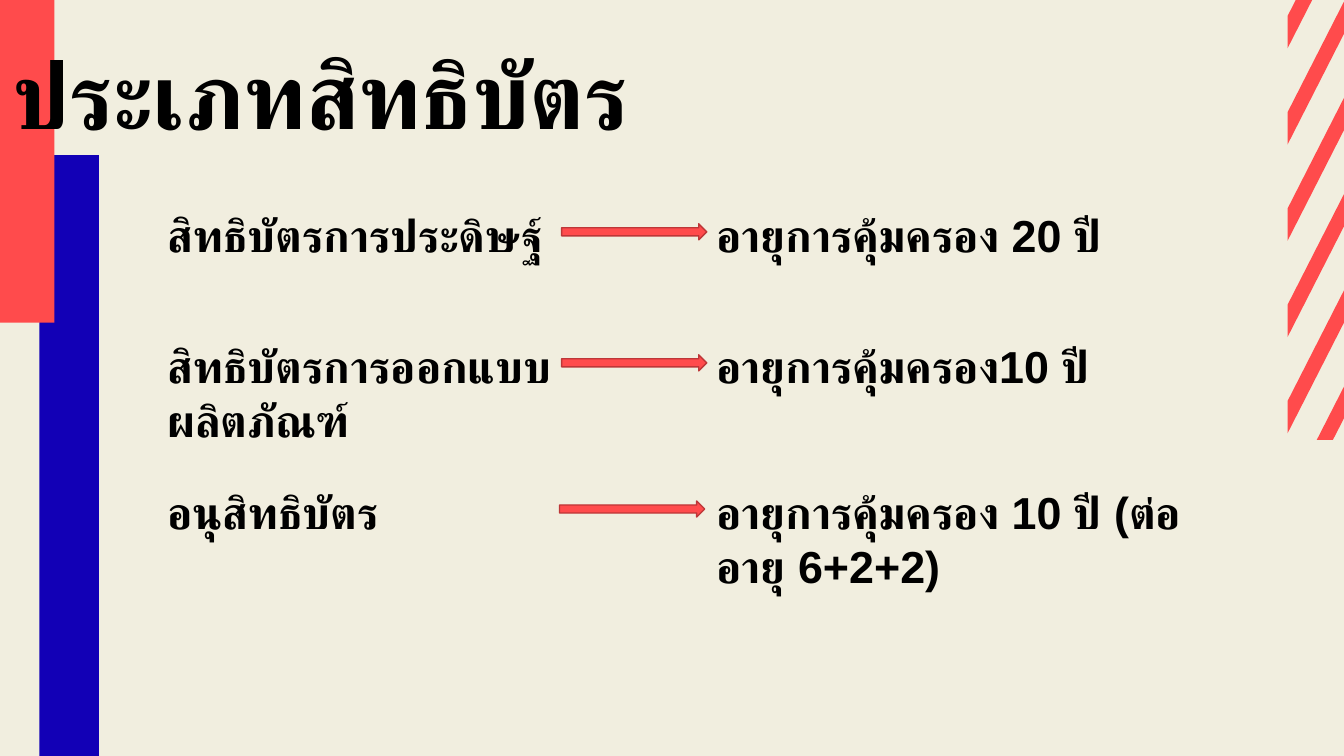
from lxml import etree
from pptx import Presentation
from pptx import util as u
from pptx.dml import color
from pptx.enum import shapes, text
from pptx.oxml import ns

RED, BLUE, CREAM, BLACK, DARK_RED = "FF4B4C", "1200B6", "F1EEDF", "000000", "BD3738"

PATENT_TYPES = [
    (2.01, "สิทธิบัตรการประดิษฐ์", "อายุการคุ้มครอง 20 ปี", 5.57, 4.64),
    (3.31, "สิทธิบัตรการออกแบบผลิตภัณฑ์", "อายุการคุ้มครอง10 ปี", 5.57, 5.22),
    (4.76, "อนุสิทธิบัตร", "อายุการคุ้มครอง 10 ปี (ต่ออายุ 6+2+2)", 5.55, 5.22),
]


def paint(fill, colour):
    """Fill with a solid colour given as a hex string."""
    fill.solid()
    fill.fore_color.rgb = color.RGBColor.from_string(colour)


def add_block(slide, kind, box, colour, outline=None):
    """Place a flat preset shape in a box given in inches."""
    block = slide.shapes.add_shape(kind, *map(u.Inches, box))
    block.shadow.inherit = False
    paint(block.fill, colour)
    if outline:
        paint(block.line.fill, outline)
        block.line.width = u.Pt(1)
    else:
        block.line.fill.background()
    return block


def add_words(slide, box, words, size):
    """Place bold black wrapped text in a box given in inches."""
    words_box = slide.shapes.add_textbox(*map(u.Inches, box))
    frame = words_box.text_frame
    frame.word_wrap = True
    frame.text = words
    run = frame.paragraphs[0].runs[0]
    run.font.size = u.Pt(size)
    run.font.bold = True
    run.font.name = "Arial"
    paint(run.font.fill, BLACK)
    thai_font = etree.SubElement(run.font._element, ns.qn("a:cs"))
    thai_font.set("typeface", "Arial")
    return frame


def add_stripe(slide, points):
    """Draw one red outline through points given in inches."""
    corners = [(u.Inches(x), u.Inches(y)) for x, y in points]
    builder = slide.shapes.build_freeform(*corners[0])
    builder.add_line_segments(corners[1:], close=True)
    stripe = builder.convert_to_shape()
    stripe.shadow.inherit = False
    paint(stripe.fill, RED)
    stripe.line.fill.background()


def add_stripes(slide, left, top):
    """Stack the chevrons and the last cut-off one at the right edge."""
    middle, right = left + 1.06, left + 2.13
    pitch, rise, thickness = 0.955, 2.08, 0.32
    for row in range(5):
        apex = top + row * pitch
        foot = apex + rise
        add_stripe(slide, [
            (left, foot), (left, foot + thickness), (middle, apex + thickness),
            (right, foot + thickness), (right, foot), (middle, apex)])
    apex = top + 5 * pitch
    base = apex + 1.51
    add_stripe(slide, [
        (middle - 0.61, base), (middle, apex + thickness), (middle + 0.61, base),
        (middle + 0.77, base), (middle, apex), (middle - 0.77, base)])


def add_side_bars(slide, left, top):
    """Place the blue bar with the red bar over it."""
    add_block(slide, shapes.MSO_SHAPE.RECTANGLE, (left + 0.39, top + 2.26, 0.59, 6.07), BLUE)
    add_block(slide, shapes.MSO_SHAPE.RECTANGLE, (left, top, 0.54, 3.92), RED)


def add_title(slide, box):
    """Place the centred heading with its soft text shadow."""
    frame = add_words(slide, box, "ประเภทสิทธิบัตร ", 66)
    frame.vertical_anchor = text.MSO_ANCHOR.BOTTOM
    heading = frame.paragraphs[0]
    heading.alignment = text.PP_ALIGN.CENTER
    effects = etree.Element(ns.qn("a:effectLst"))
    shadow = etree.SubElement(
        effects, ns.qn("a:outerShdw"), blurRad="38100", dist="38100", dir="2700000", algn="tl")
    shade = etree.SubElement(shadow, ns.qn("a:srgbClr"), val=BLACK)
    etree.SubElement(shade, ns.qn("a:alpha"), val="43000")
    heading.runs[0].font._element.find(ns.qn("a:solidFill")).addnext(effects)


def add_patent_row(slide, top, patent, term, arrow_left, term_width):
    """Place a patent type, its arrow and its term of protection."""
    for left, width, words in ((1.56, 4.64, patent), (7.01, term_width, term)):
        frame = add_words(slide, (left, top, width, 0.64), words, 32)
        frame.auto_size = text.MSO_AUTO_SIZE.SHAPE_TO_FIT_TEXT
    add_block(slide, shapes.MSO_SHAPE.RIGHT_ARROW, (arrow_left, top + 0.21, 1.44, 0.16), RED, DARK_RED)


def main():
    """Build the slide of patent types and save it."""
    deck = Presentation()
    deck.slide_width, deck.slide_height = u.Inches(13.33), u.Inches(7.5)
    slide = deck.slides.add_slide(deck.slide_layouts[6])
    paint(slide.background.fill, CREAM)
    add_stripes(slide, 12.77, -1.92)
    add_side_bars(slide, 0, -0.72)
    add_title(slide, (-2.78, -0.65, 12.18, 2.17))
    for row in PATENT_TYPES:
        add_patent_row(slide, *row)
    deck.save("out.pptx")


if __name__ == "__main__":
    main()
